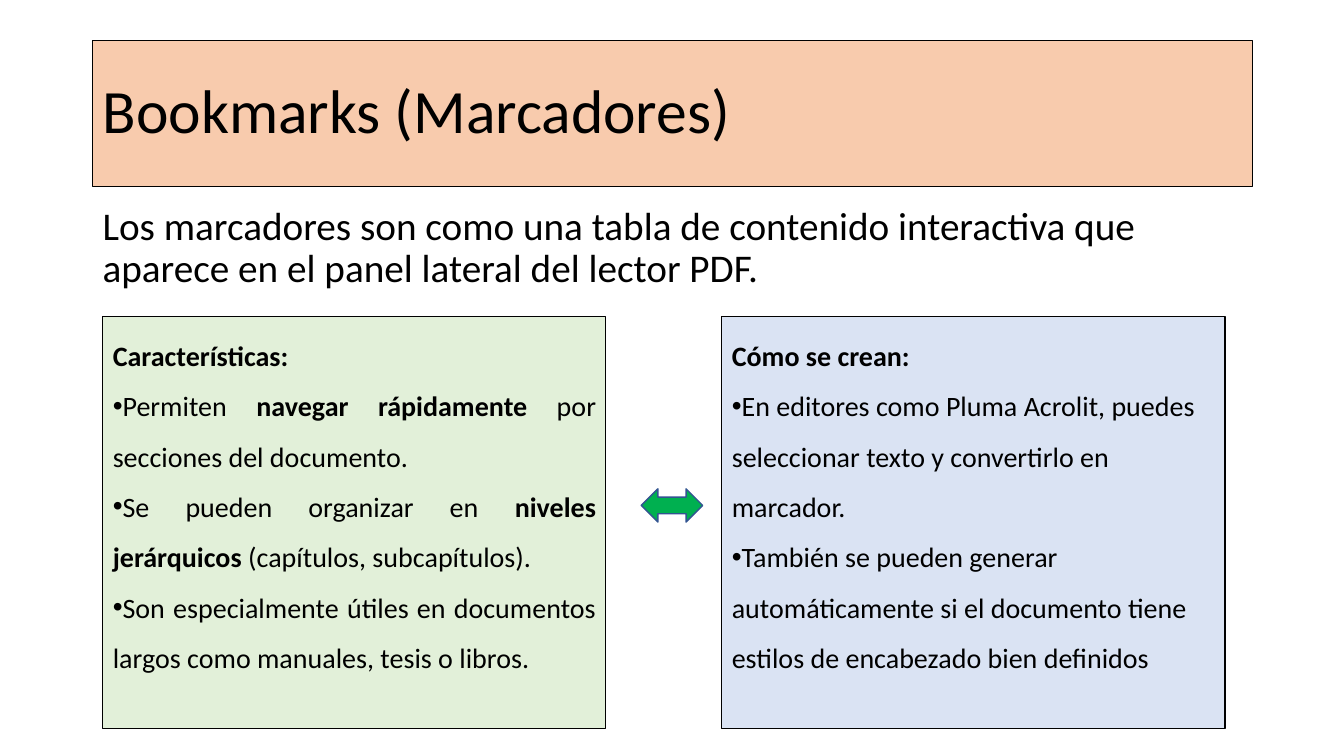
from lxml import etree
from pptx import Presentation, util as u
from pptx.dml.color import RGBColor
from pptx.enum import shapes, text
from pptx.oxml.ns import qn

HUES = {"ink": "000000", "peach": "F8CBAD", "mint": "E2F0D9",
        "sky": "DAE3F3", "green": "00B050", "edge": "325491"}
FONT = "Calibri"

TRAITS = [
    [("Características:", True)],
    [("Permiten ", False), ("navegar rápidamente", True),
     (" por secciones del documento.", False)],
    [("Se pueden organizar en ", False), ("niveles jerárquicos", True),
     (" (capítulos, subcapítulos).", False)],
    [("Son especialmente útiles en documentos largos como manuales, "
      "tesis o libros.", False)],
]
STEPS = [
    [("Cómo se crean:", True)],
    [("En editores como Pluma Acrolit, puedes seleccionar texto y "
      "convertirlo en marcador.", False)],
    [("También se pueden generar automáticamente si el documento tiene "
      "estilos de encabezado bien definidos", False)],
]


def hue(name):
    """Return the named colour."""
    return RGBColor.from_string(HUES[name])


def draw(slide, kind, box, fill, line="ink", width=0.75):
    """Add a filled and outlined shape in the box."""
    shape = slide.shapes.add_shape(kind, *map(u.Inches, box))
    shape.shadow.inherit = False
    shape.fill.solid()
    shape.fill.fore_color.rgb = hue(fill)
    shape.line.color.rgb = hue(line)
    shape.line.width = u.Pt(width)
    return shape


def style(para, size, space, align=text.PP_ALIGN.LEFT):
    """Set the font, line spacing and alignment of a paragraph."""
    para.font.name = FONT
    para.font.size = u.Pt(size)
    para.font.color.rgb = hue("ink")
    para.line_spacing = space
    para.alignment = align


def bullet(para):
    """Put a bullet in front of a paragraph."""
    props = para._p.get_or_add_pPr()
    etree.SubElement(props, qn("a:buFont")).set("typeface", "Arial")
    mark = etree.SubElement(props, qn("a:buChar"))
    mark.set("char", "•")
    fonts = props.find(qn("a:defRPr"))
    if fonts is not None:
        props.append(fonts)


def title(slide, box, words):
    """Draw the title banner."""
    frame = draw(slide, shapes.MSO_SHAPE.RECTANGLE, box, "peach").text_frame
    frame.word_wrap = True
    frame.vertical_anchor = text.MSO_ANCHOR.MIDDLE
    frame.text = words
    style(frame.paragraphs[0], 44, 0.9)


def intro(slide, box, words):
    """Write the opening sentence."""
    frame = slide.shapes.add_textbox(*map(u.Inches, box)).text_frame
    frame.word_wrap = True
    frame.text = words
    para = frame.paragraphs[0]
    style(para, 28, 0.9)
    para.space_before = u.Pt(10)


def panel(slide, box, fill, items, align):
    """Draw a panel with a heading and bullets."""
    frame = draw(slide, shapes.MSO_SHAPE.RECTANGLE, box, fill).text_frame
    frame.word_wrap = True
    frame.vertical_anchor = text.MSO_ANCHOR.TOP
    for index, item in enumerate(items):
        para = frame.add_paragraph() if index else frame.paragraphs[0]
        style(para, 20, 1.5, align)
        if index:
            bullet(para)
        for words, bold in item:
            run = para.add_run()
            run.text = words
            run.font.bold = bold


def main():
    """Build the slide and save it."""
    deck = Presentation()
    deck.slide_width, deck.slide_height = u.Inches(13.33), u.Inches(7.5)
    slide = deck.slides.add_slide(deck.slide_layouts[6])
    title(slide, (0.92, 0.4, 11.5, 1.45), "Bookmarks (Marcadores)")
    intro(slide, (0.92, 2, 11.5, 1.06),
          "Los marcadores son como una tabla de contenido interactiva que "
          "aparece en el panel lateral del lector PDF.")
    panel(slide, (1.02, 3.14, 4.99, 4.09), "mint", TRAITS,
          text.PP_ALIGN.JUSTIFY)
    panel(slide, (7.16, 3.14, 4.99, 4.09), "sky", STEPS, text.PP_ALIGN.LEFT)
    draw(slide, shapes.MSO_SHAPE.LEFT_RIGHT_ARROW, (6.36, 4.85, 0.61, 0.33),
         "green", "edge", 1)
    deck.save("out.pptx")


if __name__ == "__main__":
    main()
